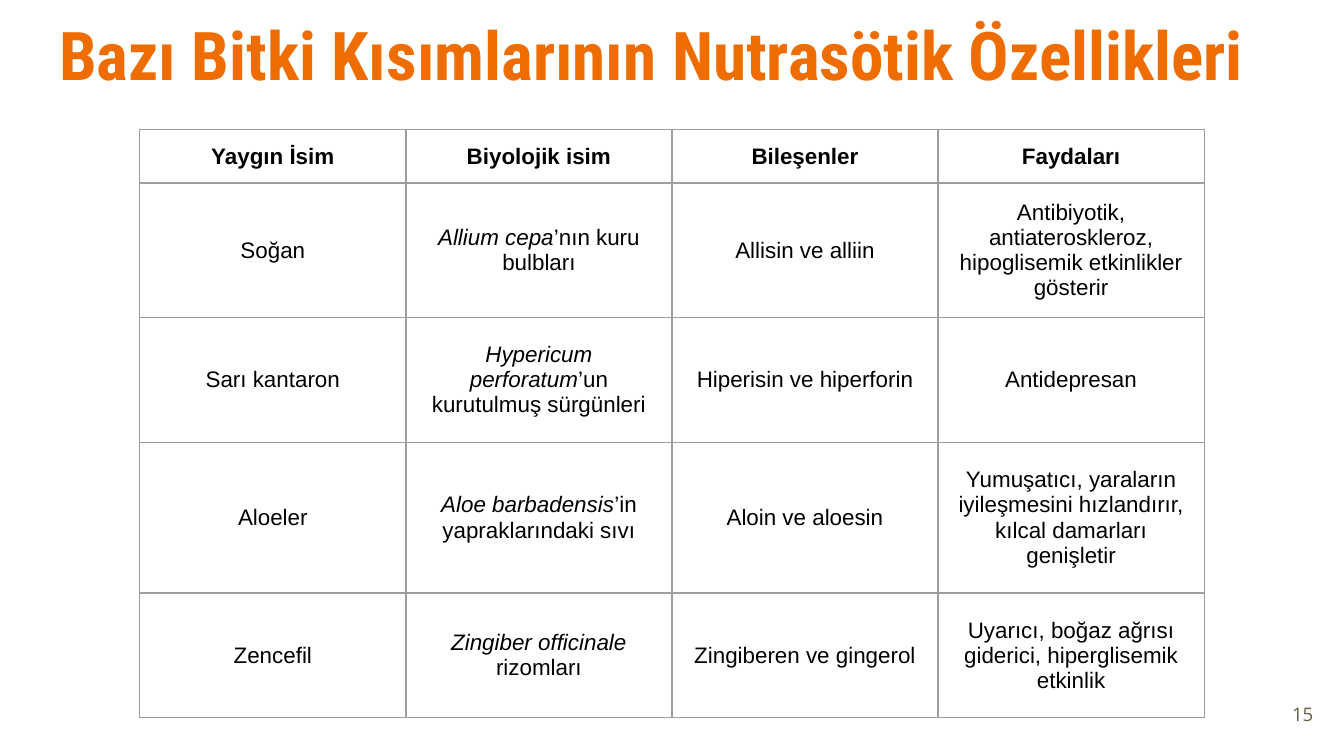
from lxml import etree
from pptx import Presentation
from pptx import util as u
from pptx.dml.color import RGBColor
from pptx.enum import text
from pptx.oxml.ns import qn

WIDTH = 10
HEIGHT = WIDTH * 9 / 16
ORANGE, BROWN, BLACK, GREY = "EF6C00", "695D46", "000000", "9E9E9E"


def color(value):
    return RGBColor.from_string(value)


class SlideBuilder:
    """Holds the style and the current slide; lengths are percent of its sides."""

    inset = u.Inches(0.1)
    border_width = u.Pt(0.75)

    def __init__(self, presentation):
        self.slide = presentation.slides.add_slide(presentation.slide_layouts[6])

    def across(self, percent):
        return u.Inches(percent * WIDTH / 100)

    def down(self, percent):
        return u.Inches(percent * HEIGHT / 100)

    def box(self, left, top, width, height):
        return self.across(left), self.down(top), self.across(width), self.down(height)

    def pad(self, target):
        target.margin_left = target.margin_right = self.inset
        target.margin_top = target.margin_bottom = self.inset

    def style(self, run, font, size, fill, bold=False, italic=False):
        run.font.name, run.font.size = font, u.Pt(size)
        run.font.bold, run.font.italic = bold, italic
        run.font.color.rgb = color(fill)

    def label(self, words, place, font, size, fill, bold=False,
              align=text.PP_ALIGN.LEFT, anchor=text.MSO_ANCHOR.TOP):
        frame = self.slide.shapes.add_textbox(*self.box(*place)).text_frame
        frame.word_wrap = True
        frame.vertical_anchor = anchor
        self.pad(frame)
        frame.text = words
        paragraph = frame.paragraphs[0]
        paragraph.alignment = align
        self.style(paragraph.runs[0], font, size, fill, bold)

    def borders(self, cell):
        properties = cell._tc.get_or_add_tcPr()
        for position, side in enumerate(("lnL", "lnR", "lnT", "lnB")):
            line = etree.Element(qn(f"a:{side}"), w=str(self.border_width))
            fill = etree.SubElement(line, qn("a:solidFill"))
            etree.SubElement(fill, qn("a:srgbClr"), val=GREY)
            properties.insert(position, line)

    def cell(self, cell, parts, bold):
        """Fill a cell with (words, italic) parts."""
        self.pad(cell)
        cell.vertical_anchor = text.MSO_ANCHOR.MIDDLE
        cell.fill.background()
        self.borders(cell)
        paragraph = cell.text_frame.paragraphs[0]
        paragraph.alignment = text.PP_ALIGN.CENTER
        for words, italic in parts:
            run = paragraph.add_run()
            run.text = words
            self.style(run, "Arial", 12, BLACK, bold, italic)

    def table(self, rows, place, column_width, row_heights):
        frame = self.slide.shapes.add_table(len(rows), len(rows[0]), *self.box(*place))
        table = frame.table
        table.first_row = table.horz_banding = False
        for column in table.columns:
            column.width = self.across(column_width)
        for row, height in zip(table.rows, row_heights):
            row.height = self.down(height)
        # Rows grow with their text, from the frame's own size
        frame.width, frame.height = self.box(*place)[2:]
        for r, row in enumerate(rows):
            for c, content in enumerate(row):
                parts = [(content, False)] if isinstance(content, str) else content
                self.cell(table.cell(r, c), parts, bold=r == 0)


def species(name, rest):
    return [(name, True), (rest, False)]


PLANTS = [
    ("Yaygın İsim", "Biyolojik isim", "Bileşenler", "Faydaları"),
    ("Soğan", species("Allium cepa", "’nın kuru bulbları"), "Allisin ve alliin",
     "Antibiyotik, antiateroskleroz, hipoglisemik etkinlikler gösterir"),
    ("Sarı kantaron", species("Hypericum perforatum", "’un kurutulmuş sürgünleri"),
     "Hiperisin ve hiperforin", "Antidepresan"),
    ("Aloeler", species("Aloe barbadensis", "’in yapraklarındaki sıvı"),
     "Aloin ve aloesin",
     "Yumuşatıcı, yaraların iyileşmesini hızlandırır, kılcal damarları genişletir"),
    ("Zencefil", species("Zingiber officinale", " rizomları"), "Zingiberen ve gingerol",
     "Uyarıcı, boğaz ağrısı giderici, hiperglisemik etkinlik"),
]


def main():
    presentation = Presentation()
    presentation.slide_width = u.Inches(WIDTH)
    presentation.slide_height = u.Inches(HEIGHT)
    builder = SlideBuilder(presentation)

    # Page number
    builder.label("15", (92.7, 90.67, 6, 7.65), "Open Sans", 10, BROWN,
                  align=text.PP_ALIGN.RIGHT, anchor=text.MSO_ANCHOR.MIDDLE)

    # Title
    builder.label("Bazı Bitki Kısımlarının Nutrasötik Özellikleri",
                  (3.42, 0, 93.2, 13.69), "Roboto Condensed", 36, ORANGE, bold=True)

    # Plants and their properties
    builder.table(PLANTS, (10.4, 17.1, 32.8, 58.3), 19.8,
                  (6.4, 16.5, 16.5, 19.95, 16.5))

    presentation.save("out.pptx")


if __name__ == "__main__":
    main()
